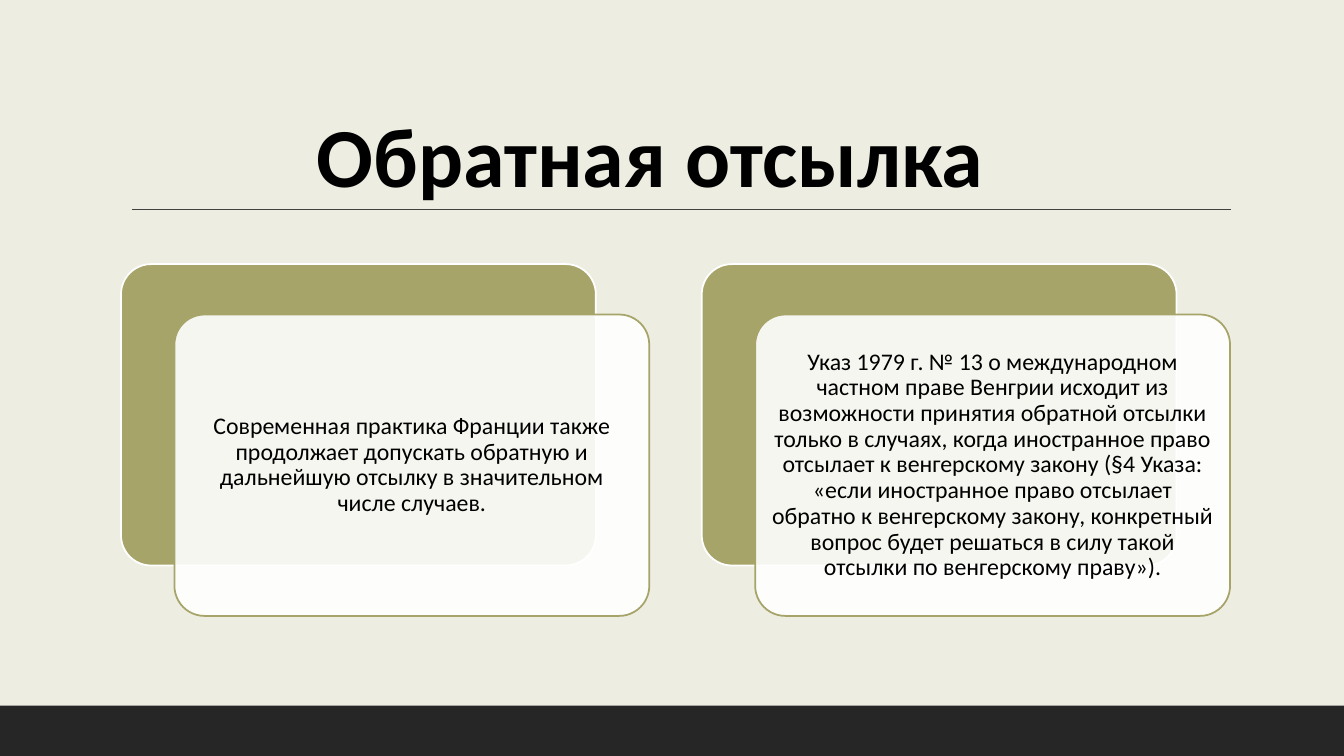
"""Builds a slide on renvoi with two layered text cards."""
from dataclasses import dataclass

from lxml import etree
from pptx import Presentation
from pptx.dml.color import RGBColor
from pptx.enum.shapes import MSO_CONNECTOR, MSO_SHAPE
from pptx.enum.text import MSO_ANCHOR, PP_ALIGN
from pptx.oxml.ns import qn
from pptx.util import Inches, Pt

RECT, ROUND = MSO_SHAPE.RECTANGLE, MSO_SHAPE.ROUNDED_RECTANGLE
STRAIGHT = MSO_CONNECTOR.STRAIGHT
LEFT, CENTER = PP_ALIGN.LEFT, PP_ALIGN.CENTER
MIDDLE = MSO_ANCHOR.MIDDLE
FONT = "Calibri"
CREAM, OLIVE, WHITE, BLACK = "EDEDE1", "A6A469", "FFFFFF", "000000"
RULE, FOOTER = "404040", "262626"
CARD_W, CARD_H, CARD_TOP = 4.71, 2.99, 2.62
SHIFT_X, SHIFT_Y = 0.53, 0.5


@dataclass
class Card:
    left: float
    text: str


CARDS = [
    Card(1.2, "Современная практика Франции также продолжает допускать обратную "
              "и дальнейшую отсылку в значительном числе случаев."),
    Card(6.96, "Указ 1979 г. № 13 о международном частном праве Венгрии исходит из "
               "возможности принятия обратной отсылки только в случаях, когда "
               "иностранное право отсылает к венгерскому закону (§4 Указа: «если "
               "иностранное право отсылает обратно к венгерскому закону, конкретный "
               "вопрос будет решаться в силу такой отсылки по венгерскому праву»)."),
]


def rgb(value: str) -> RGBColor:
    return RGBColor.from_string(value)


def write(shape, text: str, size: float, align, bold: bool = False):
    tf = shape.text_frame
    tf.word_wrap = True
    tf.vertical_anchor = MIDDLE
    tf.text = text
    p = tf.paragraphs[0]
    p.alignment = align
    font = p.runs[0].font
    font.name, font.size, font.bold = FONT, Pt(size), bold
    font.color.rgb = rgb(BLACK)
    return p


def add_panel(s, left: float, top: float, fill: str, line: str):
    sp = s.shapes.add_shape(ROUND, Inches(left), Inches(top),
                            Inches(CARD_W), Inches(CARD_H))
    sp.adjustments[0] = 0.1
    sp.shadow.inherit = False
    sp.fill.solid()
    sp.fill.fore_color.rgb = rgb(fill)
    sp.line.color.rgb = rgb(line)
    sp.line.width = Pt(1.25)
    return sp


def add_card(s, card: Card) -> None:
    add_panel(s, card.left, CARD_TOP, OLIVE, WHITE)
    sp = add_panel(s, card.left + SHIFT_X, CARD_TOP + SHIFT_Y, WHITE, OLIVE)
    color = sp.fill._xPr.find(qn("a:solidFill"))[0]
    etree.SubElement(color, qn("a:alpha")).set("val", "90000")
    tf = sp.text_frame
    tf.margin_left = tf.margin_right = tf.margin_top = tf.margin_bottom = Inches(0.07)
    write(sp, card.text, 17, CENTER).line_spacing = 0.9


def add_rule(s) -> None:
    line = s.shapes.add_connector(STRAIGHT, Inches(1.31), Inches(2.08),
                                  Inches(12.21), Inches(2.08))
    line.line.color.rgb = rgb(RULE)
    line.line.width = Pt(1)
    etree.SubElement(line._element.spPr, qn("a:effectLst"))


def add_footer(s) -> None:
    sp = s.shapes.add_shape(RECT, 0, Inches(7), Inches(13.33), Inches(0.5))
    sp.shadow.inherit = False
    sp.fill.solid()
    sp.fill.fore_color.rgb = rgb(FOOTER)
    sp.line.fill.background()


def main() -> None:
    prs = Presentation()
    prs.slide_width, prs.slide_height = Inches(13.33), Inches(7.5)
    s = prs.slides.add_slide(prs.slide_layouts[5])
    s.background.fill.solid()
    s.background.fill.fore_color.rgb = rgb(CREAM)
    title = s.shapes.title
    title.left, title.top = Inches(3.04), Inches(0.97)
    title.width, title.height = Inches(9.11), Inches(1.11)
    write(title, "Обратная отсылка", 60, LEFT, bold=True)
    add_rule(s)
    add_footer(s)
    for card in CARDS:
        add_card(s, card)
    prs.save("out.pptx")


if __name__ == "__main__":
    main()
